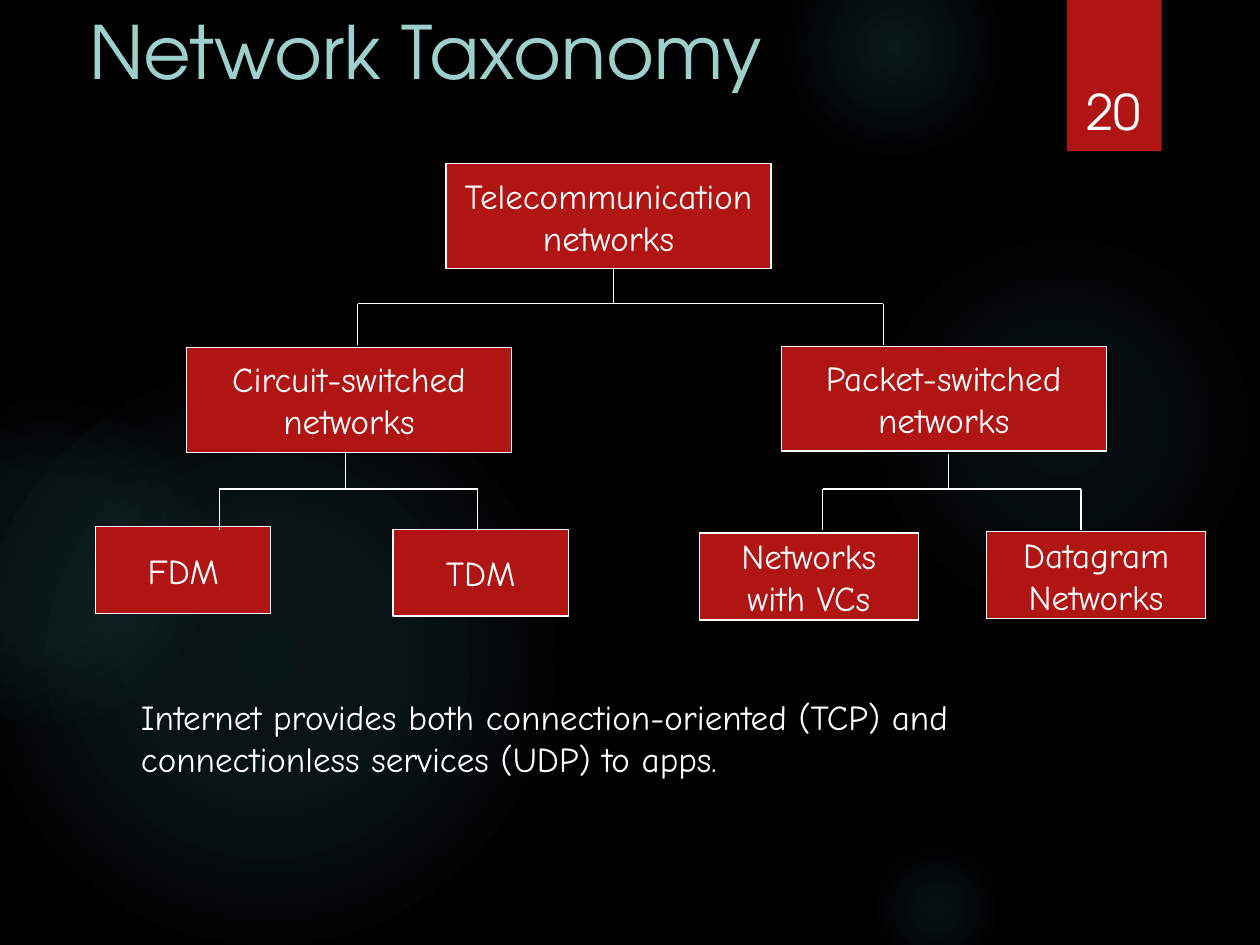
from dataclasses import dataclass

from lxml import etree
from pptx import Presentation
from pptx.dml.color import RGBColor
from pptx.enum.shapes import MSO_CONNECTOR as CONN, MSO_SHAPE as SHAPE
from pptx.enum.text import MSO_ANCHOR as ANCHOR, PP_ALIGN as ALIGN
from pptx.oxml.ns import qn
from pptx.util import Inches, Pt


@dataclass(frozen=True)
class Theme:
    back: str = "000000"
    glow: str = "50B9C1"
    accent: str = "B01513"
    title: str = "9DD0CB"
    text: str = "FFFFFF"
    title_font: str = "TeX Gyre Adventor"
    body_font: str = "Comic Neue"
    title_size: int = 42
    number_size: int = 28
    body_size: int = 20
    line: float = 0.75


T = Theme()

# Glow circles: left, top, diameter, (position %, opacity %) stops
GLOWS = [
    (6.89, 1.83, 3.08, ((0, 7), (36, 6), (69, 0))),
    (6.22, -0.5, 1.75, ((0, 14), (36, 7), (73, 0))),
    (6.89, 6.67, 1.08, ((0, 9), (36, 5), (66, 0))),
    (-0.17, 2.92, 4.58, ((0, 11), (36, 10), (75, 0))),
    (-0.92, 3.17, 2.58, ((0, 8), (36, 8), (72, 0))),
]


def rgb(value):
    return RGBColor.from_string(value)


def inches(box):
    return [Inches(v) for v in box]


def write(tf, lines, size, font, color=T.text, align=ALIGN.LEFT):
    for i, line in enumerate(lines):
        p = tf.paragraphs[0] if i == 0 else tf.add_paragraph()
        p.alignment = align
        r = p.add_run()
        r.text = line
        r.font.size, r.font.name = Pt(size), font
        r.font.color.rgb = rgb(color)


def add_panel(shapes, box, kind=SHAPE.RECTANGLE):
    sp = shapes.add_shape(kind, *inches(box))
    sp.shadow.inherit = False
    sp.fill.solid()
    sp.fill.fore_color.rgb = rgb(T.accent)
    sp.line.fill.background()
    return sp


def add_glow(shapes, left, top, size, stops):
    sp = add_panel(shapes, (left, top, size, size), SHAPE.OVAL)
    grad = etree.Element(qn("a:gradFill"), rotWithShape="1")
    gs_list = etree.SubElement(grad, qn("a:gsLst"))
    for pos, opacity in stops:
        gs = etree.SubElement(gs_list, qn("a:gs"), pos=str(pos * 1000))
        clr = etree.SubElement(gs, qn("a:srgbClr"), val=T.glow)
        etree.SubElement(clr, qn("a:alpha"), val=str(opacity * 1000))
    radial = etree.SubElement(grad, qn("a:path"), path="circle")
    etree.SubElement(radial, qn("a:fillToRect"),
                     dict.fromkeys("ltrb", "50000"))
    sp_pr = sp._element.spPr
    sp_pr.replace(sp_pr.find(qn("a:solidFill")), grad)


def add_node(shapes, box, *lines):
    sp = add_panel(shapes, box)
    sp.line.color.rgb = rgb(T.text)
    sp.line.width = Pt(T.line)
    tf = sp.text_frame
    tf.word_wrap = False
    tf.vertical_anchor = ANCHOR.MIDDLE
    write(tf, lines, T.body_size, T.body_font, align=ALIGN.CENTER)


def add_line(shapes, x1, y1, x2, y2):
    ln = shapes.add_connector(CONN.STRAIGHT, *inches((x1, y1, x2, y2)))
    ln.line.color.rgb = rgb(T.text)
    ln.line.width = Pt(T.line)
    etree.SubElement(ln._element.spPr, qn("a:effectLst"))


def add_fork(shapes, stem, top, bar, left, right, drop=0.33):
    """A stem down to a bar, with a leg at each end of the bar."""
    add_line(shapes, left, bar, right, bar)
    add_line(shapes, right, bar, right, bar + drop)
    add_line(shapes, left, bar, left, bar + drop)
    add_line(shapes, stem, top, stem, bar)


def add_branch(slide, parent, children, fork):
    shapes = slide.shapes.add_group_shape().shapes
    for node in (parent, *children):
        add_node(shapes, *node)
    add_fork(shapes, *fork)


def add_header(slide, title_box, ribbon, number_box):
    add_panel(slide.shapes, ribbon)
    title = slide.shapes.title
    title.left, title.top, title.width, title.height = inches(title_box)
    title.text_frame.vertical_anchor = ANCHOR.TOP
    write(title.text_frame, ["Network Taxonomy"], T.title_size,
          T.title_font, T.title)
    tf = slide.shapes.add_textbox(*inches(number_box)).text_frame
    tf.word_wrap = True
    tf.vertical_anchor = ANCHOR.BOTTOM
    write(tf, ["20"], T.number_size, T.title_font, align=ALIGN.CENTER)


def add_tree(slide):
    big, small, wide = (2.58, 0.83), (1.39, 0.69), (1.74, 0.69)
    add_node(slide.shapes, (3.54, 1.3, *big), "Telecommunication", "networks")
    add_branch(
        slide,
        ((1.48, 2.76, *big), "Circuit-switched", "networks"),
        [((0.76, 4.18, *small), "FDM"), ((3.12, 4.2, *small), "TDM")],
        (2.74, 3.59, 3.88, 1.74, 3.79))
    add_branch(
        slide,
        ((6.2, 2.75, *big), "Packet-switched", "networks"),
        [((5.55, 4.23, *wide), "Networks", "with VCs"),
         ((7.83, 4.22, *wide), "Datagram", "Networks")],
        (7.53, 3.6, 3.88, 6.53, 8.58))
    add_fork(slide.shapes.add_group_shape().shapes,
             4.87, 2.13, 2.41, 2.84, 7.01)


def add_remark(slide, box):
    tf = slide.shapes.add_textbox(*inches(box)).text_frame
    tf.word_wrap = False
    write(tf, ["Internet provides both connection-oriented (TCP) and",
               "connectionless services (UDP) to apps."],
          T.body_size, T.body_font)


def main():
    prs = Presentation()
    prs.slide_width, prs.slide_height = Inches(10), Inches(7.5)
    slide = prs.slides.add_slide(prs.slide_layouts[5])

    # Backdrop
    slide.background.fill.solid()
    slide.background.fill.fore_color.rgb = rgb(T.back)
    for glow in GLOWS:
        add_glow(slide.shapes, *glow)

    # Content
    add_header(slide, (0.61, 0, 8.5, 1.09), (8.47, 0, 0.75, 1.2),
               (8.49, 0.32, 0.69, 0.84))
    add_tree(slide)
    add_remark(slide, (1.02, 5.47, 7.29, 0.77))
    prs.save("out.pptx")


if __name__ == "__main__":
    main()
